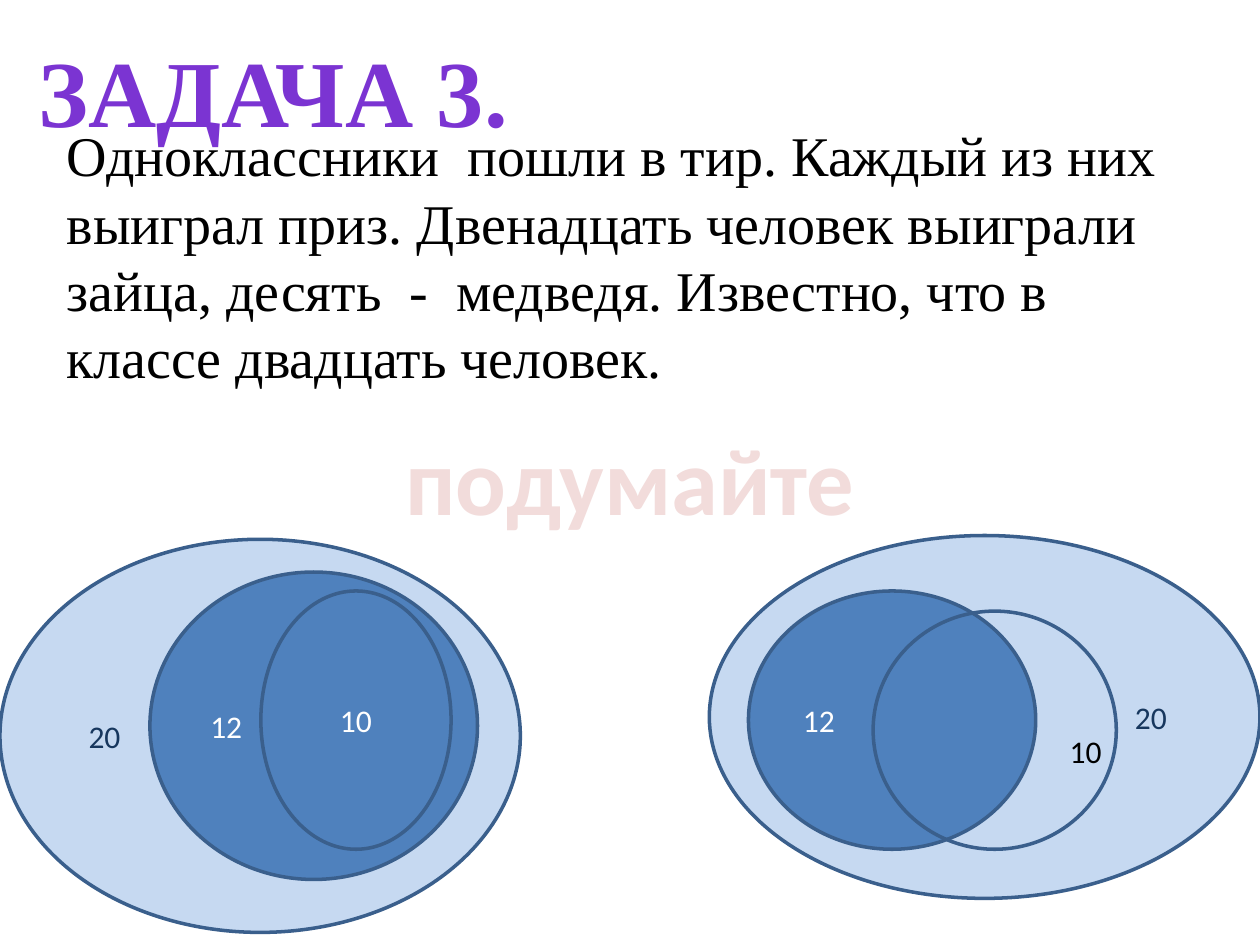
from dataclasses import dataclass

from pptx import Presentation
from pptx.dml.color import RGBColor
from pptx.enum.shapes import MSO_SHAPE
from pptx.enum.text import MSO_ANCHOR, PP_ALIGN
from pptx.util import Inches, Pt

COLORS = {
    "title": "7B34D2",
    "hint": "F2DCDB",
    "black": "000000",
    "white": "FFFFFF",
    "navy": "17375E",
    "class": "C6D9F1",
    "winners": "4F81BD",
    "outline": "3A5F8C",
}


@dataclass
class Label:
    text: str
    box: tuple[float, float, float, float]
    size: int
    color: str
    font: str = "Calibri"
    bold: bool = False
    align: PP_ALIGN = PP_ALIGN.LEFT
    wrap: bool = True


@dataclass
class VennSet:
    box: tuple[float, float, float, float]
    fill: str | None
    text: str = ""
    color: str = "white"
    align: PP_ALIGN = PP_ALIGN.LEFT


def rgb(name: str) -> RGBColor:
    return RGBColor.from_string(COLORS[name])


def write(tf, text: str, size: int, color: str, font: str, bold: bool, align: PP_ALIGN) -> None:
    tf.text = text
    p = tf.paragraphs[0]
    p.alignment = align
    for r in p.runs:
        r.font.size = Pt(size)
        r.font.name = font
        r.font.bold = bold
        r.font.color.rgb = rgb(color)


def add_label(slide, label: Label) -> None:
    tf = slide.shapes.add_textbox(*map(Inches, label.box)).text_frame
    tf.word_wrap = label.wrap
    write(tf, label.text, label.size, label.color, label.font, label.bold, label.align)


def add_set(slide, venn: VennSet) -> None:
    sp = slide.shapes.add_shape(MSO_SHAPE.FLOWCHART_CONNECTOR, *map(Inches, venn.box))
    sp.shadow.inherit = False
    sp.line.color.rgb = rgb("outline")
    sp.line.width = Pt(2)
    if venn.fill:
        sp.fill.solid()
        sp.fill.fore_color.rgb = rgb(venn.fill)
    else:
        sp.fill.background()
    if venn.text:
        sp.text_frame.vertical_anchor = MSO_ANCHOR.MIDDLE
        write(sp.text_frame, venn.text, 18, venn.color, "Calibri", False, venn.align)


LABELS = [
    Label("Одноклассники  пошли в тир. Каждый из них выиграл приз. "
          "Двенадцать человек выиграли зайца, десять  -  медведя. "
          "Известно, что в классе двадцать человек.",
          (0.43, 0.91, 9.21, 2.26), 32, "black", "Times New Roman"),
    Label("ЗАДАЧА 3.", (0.2, 0.21, 3.94, 1.01), 54, "title", "Times New Roman",
          True, PP_ALIGN.CENTER, False),
    Label("подумайте", (3, 3.29, 4, 1.01), 54, "hint", bold=True, align=PP_ALIGN.CENTER),
]

VENN_SETS = [
    # Left diagram: one set inside the other
    VennSet((0, 4.28, 4.13, 3.12), "class", "20", "navy"),
    VennSet((1.19, 4.54, 2.6, 2.44), "winners", "12"),
    VennSet((2.07, 4.69, 1.51, 2.05), "winners", "10", align=PP_ALIGN.CENTER),
    # Right diagram: overlapping sets
    VennSet((5.63, 4.25, 4.37, 2.88), "class", "20", "navy", PP_ALIGN.RIGHT),
    VennSet((5.94, 4.69, 2.28, 2.05), "winners", "12"),
    VennSet((6.93, 4.85, 1.93, 1.89), None),
]


def main() -> None:
    prs = Presentation()
    prs.slide_width, prs.slide_height = Inches(10), Inches(7.5)
    s = prs.slides.add_slide(prs.slide_layouts[6])

    # Task text
    for label in LABELS:
        add_label(s, label)

    # Venn diagrams
    for venn in VENN_SETS:
        add_set(s, venn)
    add_label(s, Label("10", (8.39, 5.76, 0.62, 0.4), 18, "black"))

    prs.save("out.pptx")


if __name__ == "__main__":
    main()
